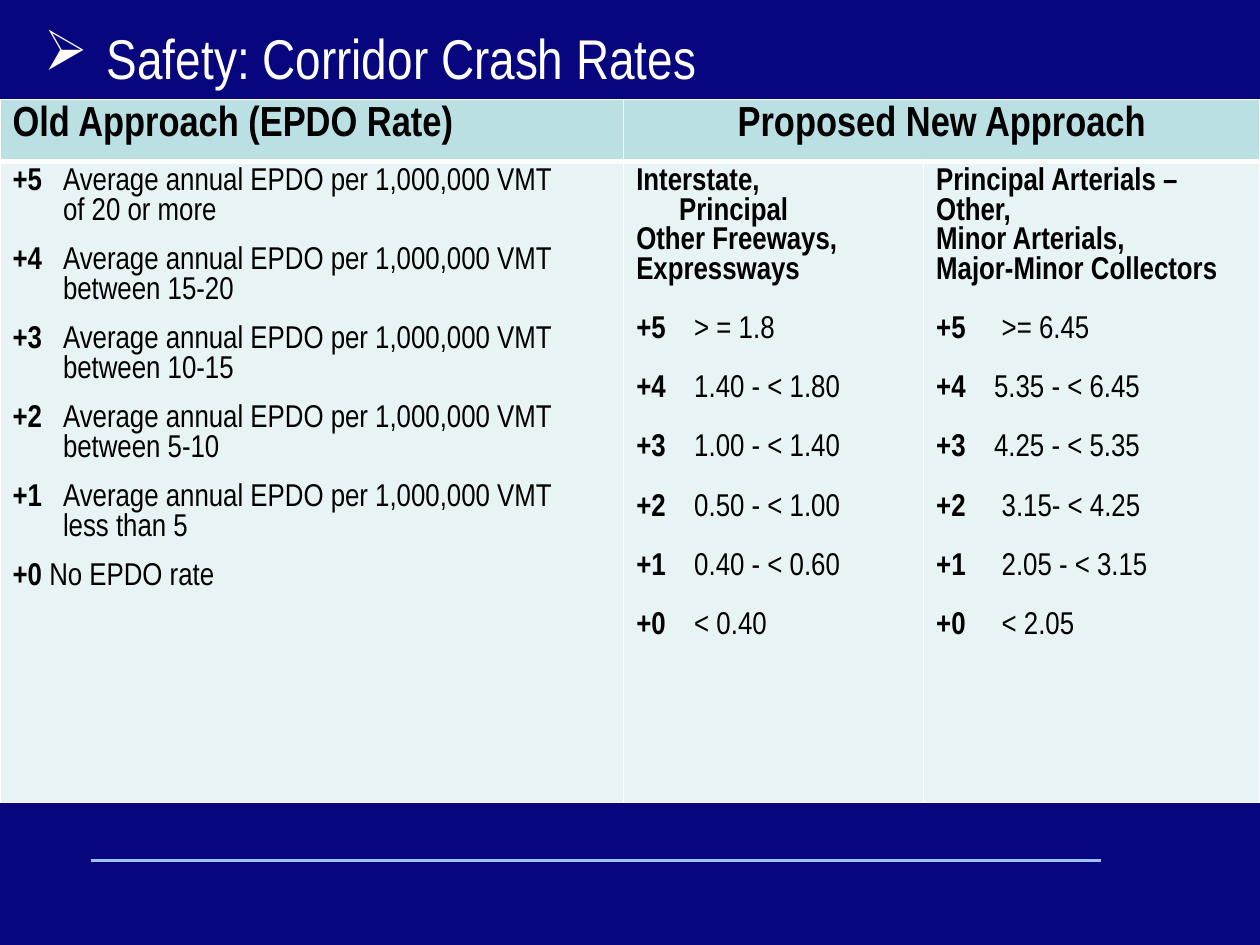
from dataclasses import dataclass

from lxml import etree
from pptx import Presentation
from pptx.dml.color import RGBColor
from pptx.enum.shapes import MSO_CONNECTOR
from pptx.enum.text import MSO_AUTO_SIZE, PP_ALIGN
from pptx.oxml.ns import qn
from pptx.util import Inches, Pt

LINE = MSO_CONNECTOR.STRAIGHT
GROW = MSO_AUTO_SIZE.SHAPE_TO_FIT_TEXT
CENTER = PP_ALIGN.CENTER


@dataclass(frozen=True)
class Theme:
    font: str = "Arial Narrow"
    navy: str = "07067E"
    white: str = "FEFFFC"
    black: str = "000000"
    head: str = "BBE0E3"
    body: str = "E7F3F4"
    rule: str = "9DC2FF"
    title: int = 32
    large: int = 24
    text: int = 18


theme = Theme()


def add_text(frame, runs, size=theme.text, color=theme.black,
             left=0, hang=0, gap=0):
    """Add a paragraph of (text, bold) runs, reusing an empty first one."""
    para = frame.paragraphs[0]
    if para.runs:
        para = frame.add_paragraph()
    props = para._p.get_or_add_pPr()
    props.set("marL", str(Inches(left)))
    props.set("indent", str(-Inches(hang)))
    if gap:
        para.space_before = Pt(gap)
    for words, bold in runs:
        run = para.add_run()
        run.text = words
        run.font.name = theme.font
        run.font.size = Pt(size)
        run.font.bold = bold
        run.font.color.rgb = RGBColor.from_string(color)
    return para


def style_cell(cell, fill, base):
    """Draw the four borders of a cell, then fill it."""
    props = cell._tc.get_or_add_tcPr()
    for side, width in (("L", 1), ("R", 1), ("T", 1), ("B", base)):
        edge = etree.SubElement(props, qn(f"a:ln{side}"), w=str(Pt(width)))
        solid = etree.SubElement(edge, qn("a:solidFill"))
        etree.SubElement(solid, qn("a:srgbClr"), val=theme.white)
    cell.fill.solid()
    cell.fill.fore_color.rgb = RGBColor.from_string(fill)


# Slide and background
deck = Presentation()
deck.slide_width, deck.slide_height = Inches(10), Inches(7.5)
slide = deck.slides.add_slide(deck.slide_layouts[6])
back = slide.background.fill
back.solid()
back.fore_color.rgb = RGBColor.from_string(theme.navy)

# Footer rule
rule = slide.shapes.add_connector(
    LINE, Inches(0.72), Inches(6.83), Inches(8.74), Inches(6.83))
rule.line.color.rgb = RGBColor.from_string(theme.rule)
rule.line.width = Pt(1.5)
etree.SubElement(rule._element.spPr, qn("a:effectLst"))

# Table grid
widths, heights = (4.95, 2.38, 2.67), (0.49, 5.09)
table = slide.shapes.add_table(
    2, 3, Inches(0), Inches(0.79), Inches(10), Inches(sum(heights))).table
table.first_row = table.horz_banding = False
for col, width in zip(table.columns, widths):
    col.width = Inches(width)
for row, height, fill, base in zip(
        table.rows, heights, (theme.head, theme.body), (3, 1)):
    row.height = Inches(height)
    for cell in row.cells:
        style_cell(cell, fill, base)
table.cell(0, 1).merge(table.cell(0, 2))

# Table headings
add_text(table.cell(0, 0).text_frame,
         [("Old Approach (EPDO Rate)", True)], theme.large)
add_text(table.cell(0, 1).text_frame,
         [("Proposed New Approach", True)], theme.large).alignment = CENTER

# Old approach: score, measure and its range below
old = table.cell(1, 0).text_frame
ranges = ("of 20 or more", "between 15-20", "between 10-15",
          "between 5-10", "less than 5")
for i, span in enumerate(ranges):
    add_text(old, [(f"+{5 - i}\t", True),
                   ("Average annual EPDO per 1,000,000 VMT", False)],
             left=0.4, hang=0.4, gap=11.3 if i else 0)
    add_text(old, [(span, False)], left=0.4)
add_text(old, [("+0 ", True), ("No EPDO rate", False)], gap=11.3)

# New approach: road classes as (text, indent), scores as (range, tab)
groups = (
    ((("Interstate,", 0), ("Principal", 0.34),
      ("Other Freeways,", 0), ("Expressways", 0)),
     (("> = 1.8", 0.46), ("1.40 - < 1.80", 0.46), ("1.00 - < 1.40", 0.46),
      ("0.50 - < 1.00", 0.46), ("0.40 - < 0.60", 0.46), ("< 0.40", 0.46))),
    ((("Principal Arterials – Other,", 0), ("Minor Arterials,", 0),
      ("Major-Minor Collectors", 0)),
     ((">= 6.45", 0.52), ("5.35 - < 6.45", 0.46), ("4.25 - < 5.35", 0.46),
      ("3.15- < 4.25", 0.52), ("2.05 - < 3.15", 0.52), ("< 2.05", 0.52))),
)
for col, (roads, rates) in enumerate(groups, 1):
    frame = table.cell(1, col).text_frame
    for road, left in roads:
        add_text(frame, [(road, True)], left=left)
    for i, (rate, tab) in enumerate(rates):
        add_text(frame, [(f"+{5 - i}\t", True), (rate, False)],
                 left=tab, hang=tab, gap=16.9)

# Title
box = slide.shapes.add_textbox(
    Inches(0.25), Inches(0.14), Inches(5.76), Inches(0.64))
frame = box.text_frame
frame.word_wrap = False
frame.auto_size = GROW
title = add_text(frame, [("Safety: Corridor Crash Rates", False)],
                 theme.title, theme.white, left=0.5, hang=0.5)
etree.SubElement(title._p.get_or_add_pPr(), qn("a:buChar"), char="➢")

deck.save("out.pptx")
